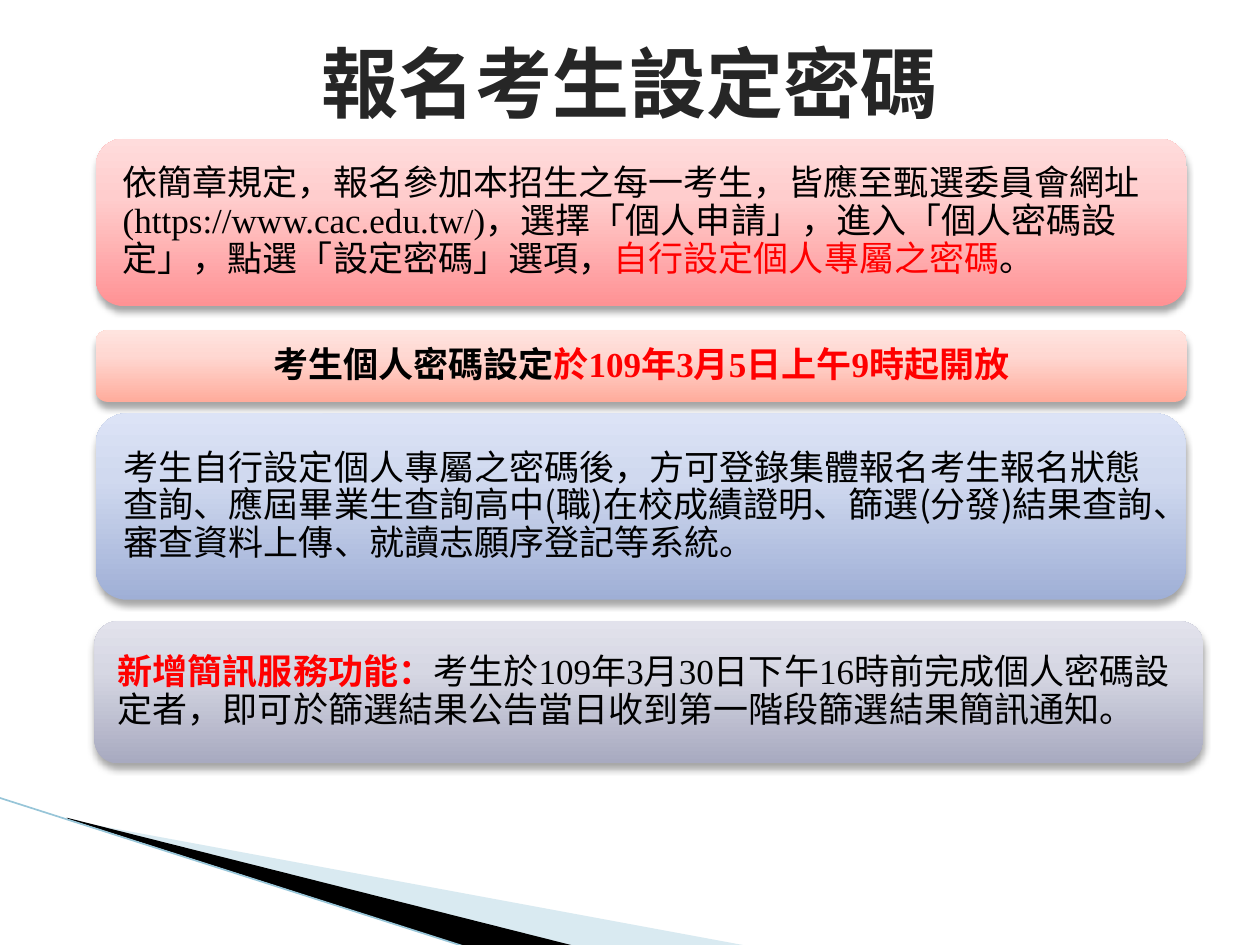
import pptx
import pptx.dml.color
import pptx.enum.shapes
import pptx.enum.text
import pptx.oxml
import pptx.oxml.ns
import pptx.util
from pptx.util import Inches

THEME = {
    "latin": "Times New Roman", "cjk": "Noto Sans CJK SC",
    "title_size": 44, "body_size": 20,
    "title": "262626", "text": "000000", "accent": "FF0000",
    "pale_wedge": "A0CBDC", "dark_wedge": "000000", "edge": "97C5D8",
    "red": ("FF9294", "FFCDCD", "FFDCDC"),
    "coral": ("FFAC9C", "FFD8D2", "FFE4DF"),
    "blue": ("9FAFD6", "D0D9EF", "DCE3F6"),
    "gray": ("A8AAC0", "D6D7E3", "E2E2EC"),
}
GRADIENT_STOPS = (0, 65, 100)
TITLE = "報名考生設定密碼"

# Each run is (text, format that differs from plain body text).
ACCENT = {"color": THEME["accent"]}
BOLD = {"bold": True}
PANELS = [
    {"at": (0.76, 1.1, 8.66, 1.33), "tint": "red", "inset": 0.15, "runs": [
        ("依簡章規定，報名參加本招生之每一考生，皆應至甄選委員會網址"
         "(https://www.cac.edu.tw/)，選擇「個人申請」，進入「個人密碼設定」，"
         "點選「設定密碼」選項，", {}),
        ("自行設定個人專屬之密碼", ACCENT), ("。", {})]},
    {"at": (0.76, 2.62, 8.66, 0.57), "tint": "coral", "inset": 0.11, "align": "CENTER", "runs": [
        ("考生個人密碼設定", BOLD),
        ("於109年3月5日上午9時起開放", {**BOLD, **ACCENT})]},
    {"at": (0.76, 3.28, 8.65, 1.48), "tint": "blue", "inset": 0.15, "runs": [
        ("考生自行設定個人專屬之密碼後，方可登錄集體報名考生報名狀態查詢、"
         "應屆畢業生查詢高中(職)在校成績證明、篩選(分發)結果查詢、審查資料上傳、"
         "就讀志願序登記等系統。", {"font": THEME["cjk"]})]},
    {"at": (0.75, 4.93, 8.8, 1.13), "tint": "gray", "inset": 0.13, "runs": [
        ("新增簡訊服務功能：", {**BOLD, **ACCENT}),
        ("考生於109年3月30日下午16時前完成個人密碼設定者，"
         "即可於篩選結果公告當日收到第一階段篩選結果簡訊通知。", {})]},
]
WEDGES = [
    {"points": [(0.55, 6.51), (5.95, 7.51), (4.56, 7.51), (0.55, 6.5)],
     "color": THEME["pale_wedge"], "alpha": 40},
    {"points": [(0.53, 6.49), (4.57, 7.51), (3.72, 7.52), (0.54, 6.5)],
     "color": THEME["dark_wedge"], "alpha": 100},
]
EDGE = (-0.01, 6.33, 3.71, 7.52)


def rgb(value):
    return pptx.dml.color.RGBColor.from_string(value)


def drawing_xml(body):
    tag, rest = body.split(" ", 1)
    return pptx.oxml.parse_xml(f"<a:{tag} {pptx.oxml.ns.nsdecls('a')} {rest}")


def add_run(paragraph, text, font=THEME["latin"], size=THEME["body_size"],
            color=THEME["text"], bold=False):
    run = paragraph.add_run()
    run.text = text
    run.font.name, run.font.size, run.font.bold = font, pptx.util.Pt(size), bold
    run.font.color.rgb = rgb(color)
    run.font._element.append(drawing_xml(f'ea typeface="{THEME["cjk"]}"/>'))


def prepare_text(shape, inset, align="LEFT", spacing=1.0):
    """Set the frame's margins and anchor, and return its first paragraph."""
    frame = shape.text_frame
    frame.word_wrap = True
    frame.vertical_anchor = pptx.enum.text.MSO_ANCHOR.MIDDLE
    frame.margin_left = frame.margin_right = Inches(inset)
    frame.margin_top = frame.margin_bottom = Inches(0.08)
    paragraph = frame.paragraphs[0]
    paragraph.alignment = getattr(pptx.enum.text.PP_ALIGN, align)
    paragraph.line_spacing = spacing
    return paragraph


def add_wedge(slide, points, color, alpha):
    start, *others = [(Inches(x), Inches(y)) for x, y in points]
    builder = slide.shapes.build_freeform(*start)
    builder.add_line_segments(others)
    wedge = builder.convert_to_shape()
    wedge.shadow.inherit = False
    wedge.line.fill.background()
    wedge.fill.solid()
    wedge.fill.fore_color.rgb = rgb(color)
    if alpha < 100:
        color_node = wedge.fill._xPr.find(".//" + pptx.oxml.ns.qn("a:srgbClr"))
        color_node.append(drawing_xml(f'alpha val="{alpha * 1000}"/>'))


def add_edge(slide):
    edge = slide.shapes.add_connector(
        pptx.enum.shapes.MSO_CONNECTOR.STRAIGHT, *map(Inches, EDGE))
    edge.line.color.rgb = rgb(THEME["edge"])
    edge.line.width = pptx.util.Pt(0.95)
    edge._element.spPr.append(drawing_xml("effectLst />"))


def add_panel(slide, at, tint, inset, runs, align="LEFT"):
    panel = slide.shapes.add_shape(
        pptx.enum.shapes.MSO_SHAPE.ROUNDED_RECTANGLE, *map(Inches, at))
    panel.line.fill.background()
    panel.shadow.inherit = False
    properties = panel._element.spPr
    stops = "".join(f'<a:gs pos="{stop * 1000}"><a:srgbClr val="{color}"/></a:gs>'
                    for stop, color in zip(GRADIENT_STOPS, THEME[tint]))
    gradient = drawing_xml(f'gradFill rotWithShape="1"><a:gsLst>{stops}</a:gsLst>'
                           '<a:lin ang="16200000" scaled="0"/></a:gradFill>')
    properties.find(pptx.oxml.ns.qn("a:prstGeom")).addnext(gradient)
    properties.find(pptx.oxml.ns.qn("a:effectLst")).append(drawing_xml(
        f'outerShdw blurRad="{pptx.util.Pt(4)}" dist="{pptx.util.Pt(3)}" dir="5400000" '
        'rotWithShape="0"><a:srgbClr val="000000"><a:alpha val="35000"/></a:srgbClr>'
        '</a:outerShdw>'))
    paragraph = prepare_text(panel, inset, align, spacing=0.9)
    for text, style in runs:
        add_run(paragraph, text, **style)


def main():
    deck = pptx.Presentation()
    deck.slide_width, deck.slide_height = Inches(10), Inches(7.5)
    slide = deck.slides.add_slide(deck.slide_layouts[6])
    for wedge in WEDGES:
        add_wedge(slide, **wedge)
    add_edge(slide)
    heading = slide.shapes.add_textbox(*map(Inches, (0.45, 0.29, 9.09, 0.71)))
    add_run(prepare_text(heading, 0.1, "CENTER"), TITLE, font=THEME["cjk"],
            size=THEME["title_size"], color=THEME["title"], bold=True)
    for panel in PANELS:
        add_panel(slide, **panel)
    deck.save("out.pptx")


if __name__ == "__main__":
    main()
